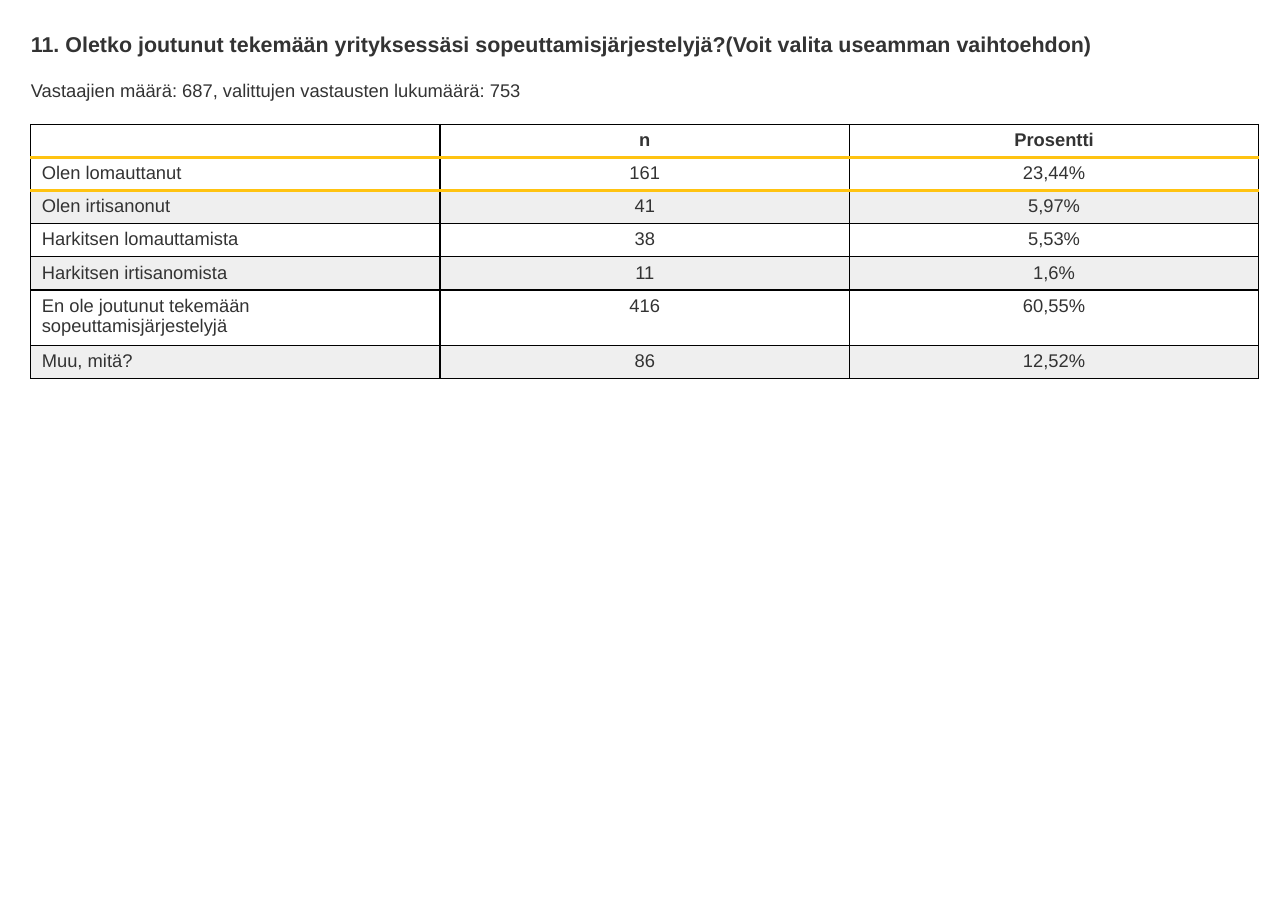
from lxml.etree import SubElement
from pptx import Presentation
from pptx.dml.color import RGBColor
from pptx.enum.text import MSO_ANCHOR, PP_ALIGN
from pptx.oxml.ns import qn
from pptx.util import Pt

TEXT, BLACK, YELLOW, WHITE, GREY = "333333", "000000", "FFC311", "FFFFFF", "EFEFEF"
LEFT, WIDTH = 20.16, 802.5
ROW_HEIGHT, TALL_ROW_HEIGHT = 21.6, 36.3
ANSWERS = [
    ("", "n", "Prosentti"),
    ("Olen lomauttanut", "161", "23,44%"),
    ("Olen irtisanonut", "41", "5,97%"),
    ("Harkitsen lomauttamista", "38", "5,53%"),
    ("Harkitsen irtisanomista", "11", "1,6%"),
    ("En ole joutunut tekemään sopeuttamisjärjestelyjä", "416", "60,55%"),
    ("Muu, mitä?", "86", "12,52%"),
]


def color(value):
    """Turn a hex string into a colour."""
    return RGBColor.from_string(value)


def write(paragraph, text, size, bold=False, alignment=PP_ALIGN.LEFT):
    """Put styled text into a paragraph."""
    paragraph.text = text
    paragraph.alignment = alignment
    font = paragraph.font
    font.name, font.size, font.bold = "Arial", Pt(size), bold
    font.color.rgb = color(TEXT)


def add_text(slide, text, top, height, size, bold=False):
    """Add a full-width line of text without insets."""
    box = slide.shapes.add_textbox(Pt(LEFT), Pt(top), Pt(WIDTH), Pt(height))
    frame = box.text_frame
    frame.word_wrap = True
    frame.margin_left = frame.margin_right = frame.margin_top = frame.margin_bottom = 0
    write(frame.paragraphs[0], text, size, bold)


def add_border(cell, side, value, width):
    """Draw one side of a cell's border."""
    properties = cell._tc.get_or_add_tcPr()
    line = SubElement(properties, qn(f"a:{side}"), w=str(Pt(width)))
    fill = SubElement(line, qn("a:solidFill"))
    SubElement(fill, qn("a:srgbClr"), val=value)


def style_cell(cell, row):
    """Give a cell its borders and row fill."""
    for side in ("lnL", "lnR", "lnT", "lnB"):
        highlighted = (side == "lnT" and row in (1, 2)) or (side == "lnB" and row in (0, 1))
        add_border(cell, side, *((YELLOW, 2) if highlighted else (BLACK, 1)))
    cell.fill.solid()
    cell.fill.fore_color.rgb = color(GREY if row and row % 2 == 0 else WHITE)
    cell.vertical_anchor = MSO_ANCHOR.TOP


def add_answer_table(slide, top):
    """Add the table of answer counts and percentages."""
    heights = [TALL_ROW_HEIGHT if len(row[0]) > 40 else ROW_HEIGHT for row in ANSWERS]
    frame = slide.shapes.add_table(
        len(ANSWERS), len(ANSWERS[0]), Pt(LEFT), Pt(top), Pt(WIDTH), Pt(sum(heights)))
    table = frame.table
    table.first_row = table.horz_banding = False
    for row, (answer, height) in enumerate(zip(ANSWERS, heights)):
        table.rows[row].height = Pt(height)
        for column, text in enumerate(answer):
            cell = table.cell(row, column)
            alignment = PP_ALIGN.CENTER if column else PP_ALIGN.LEFT
            write(cell.text_frame.paragraphs[0], text, 12, row == 0, alignment)
            style_cell(cell, row)


def main():
    """Build and save the survey slide."""
    presentation = Presentation()
    presentation.slide_width, presentation.slide_height = Pt(841.68), Pt(595.44)
    slide = presentation.slides.add_slide(presentation.slide_layouts[6])
    add_text(
        slide,
        "11. Oletko joutunut tekemään yrityksessäsi sopeuttamisjärjestelyjä?"
        "(Voit valita useamman vaihtoehdon)",
        20.16, 16.56, 14, True)
    add_text(
        slide, "Vastaajien määrä: 687, valittujen vastausten lukumäärä: 753",
        51.84, 14.4, 12)
    add_answer_table(slide, 81.36)
    presentation.save("out.pptx")


if __name__ == "__main__":
    main()
